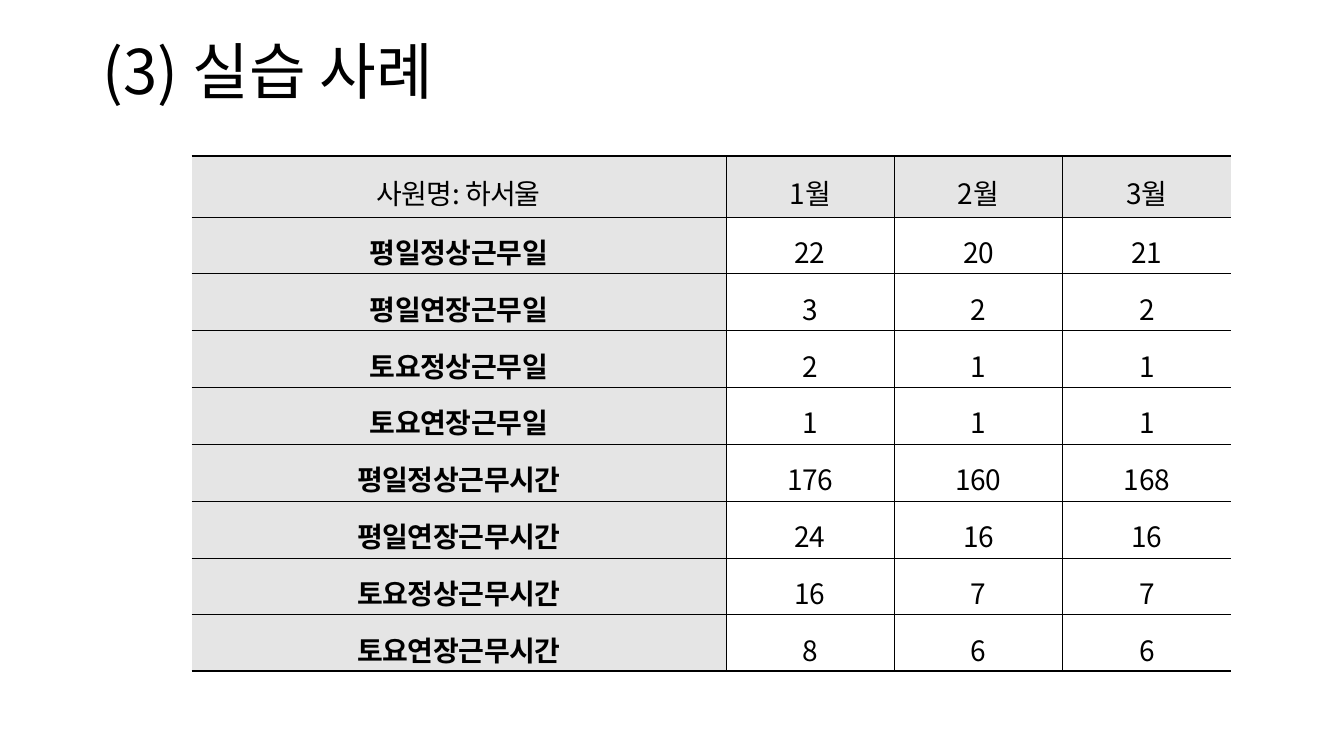
from dataclasses import dataclass

from lxml.etree import SubElement
from pptx import Presentation
from pptx.dml.color import RGBColor
from pptx.enum.text import MSO_ANCHOR as Anchor, PP_ALIGN as Align
from pptx.oxml.ns import qn
from pptx.util import Inches, Pt

FONT = "Noto Sans CJK KR"
BLACK = RGBColor(0, 0, 0)
GREY = RGBColor(0xE5, 0xE5, 0xE5)
THIN, THICK = 0.28, 1.7
MONTHS = ("1월", "2월", "3월")


@dataclass
class Row:
    label: str
    values: tuple
    head: bool = False


ROWS = [
    Row("사원명: 하서울", MONTHS, True),
    Row("평일정상근무일", (22, 20, 21)),
    Row("평일연장근무일", (3, 2, 2)),
    Row("토요정상근무일", (2, 1, 1)),
    Row("토요연장근무일", (1, 1, 1)),
    Row("평일정상근무시간", (176, 160, 168)),
    Row("평일연장근무시간", (24, 16, 16)),
    Row("토요정상근무시간", (16, 7, 7)),
    Row("토요연장근무시간", (8, 6, 6)),
]


def style(para, size: float, bold: bool = False, gap: int = 0) -> None:
    font = para.font
    font.size, font.bold, font.name = Pt(size), bold, FONT
    font.color.rgb = BLACK
    props = para._p.pPr.find(qn("a:defRPr"))
    props.set("spc", str(gap))
    SubElement(props, qn("a:ea")).set("typeface", FONT)


def border(cell, side: str, width: float) -> None:
    line = SubElement(cell._tc.get_or_add_tcPr(), qn(f"a:ln{side}"))
    line.set("w", str(Pt(width)))
    if width:
        fill = SubElement(line, qn("a:solidFill"))
        SubElement(fill, qn("a:srgbClr")).set("val", str(BLACK))
    else:
        SubElement(line, qn("a:noFill"))


def draw_cell(cell, text: str, row: Row, label: bool, edges: dict) -> None:
    cell.margin_left = cell.margin_right = Inches(0.02)
    cell.margin_top = cell.margin_bottom = Inches(0.02)
    cell.vertical_anchor = Anchor.MIDDLE
    for side, width in edges.items():
        border(cell, side, width)
    if row.head or label:
        cell.fill.solid()
        cell.fill.fore_color.rgb = GREY
    else:
        cell.fill.background()
    cell.text = text
    para = cell.text_frame.paragraphs[0]
    para.alignment, para.line_spacing = Align.CENTER, 1.3
    style(para, 20, label and not row.head, -70 if row.head else -30)


def draw_table(slide) -> None:
    last, end = len(ROWS) - 1, len(MONTHS)
    frame = slide.shapes.add_table(
        last + 1, end + 1, Inches(1.9), Inches(1.55), Inches(10.3), Inches(5))
    table = frame.table
    table.first_row = table.horz_banding = False
    for c, col in enumerate(table.columns):
        col.width = Inches(1.67 if c else 5.3)
    for r, row in enumerate(ROWS):
        table.rows[r].height = Inches(0.6 if row.head else 0.55)
        for c, text in enumerate((row.label, *row.values)):
            edges = {
                "L": THIN if c else 0,
                "R": THIN if c < end else 0,
                "T": THIN if r else THICK,
                "B": THIN if r < last else THICK,
            }
            draw_cell(table.cell(r, c), str(text), row, c == 0, edges)


def draw_title(slide) -> None:
    title = slide.shapes.title
    title.left, title.top = Inches(0.92), Inches(0.4)
    title.width, title.height = Inches(11.5), Inches(1.45)
    frame = title.text_frame
    frame.text = "(3) 실습 사례"
    frame.word_wrap = True
    frame.vertical_anchor = Anchor.MIDDLE
    frame.margin_bottom = Inches(0.83)
    para = frame.paragraphs[0]
    para.alignment, para.line_spacing = Align.LEFT, 0.9
    style(para, 44)


def main() -> None:
    deck = Presentation()
    deck.slide_width, deck.slide_height = Inches(13.33), Inches(7.5)
    slide = deck.slides.add_slide(deck.slide_layouts[5])
    draw_title(slide)
    draw_table(slide)
    deck.save("out.pptx")


if __name__ == "__main__":
    main()
